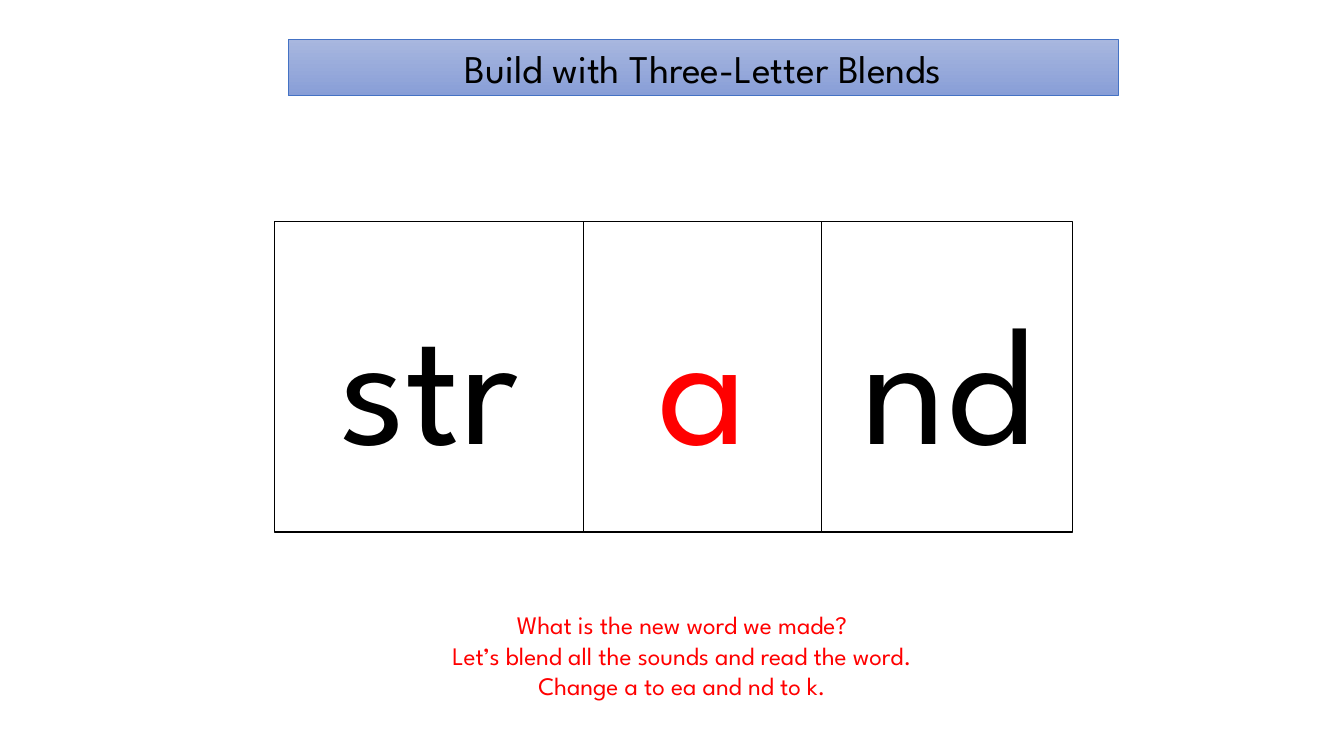
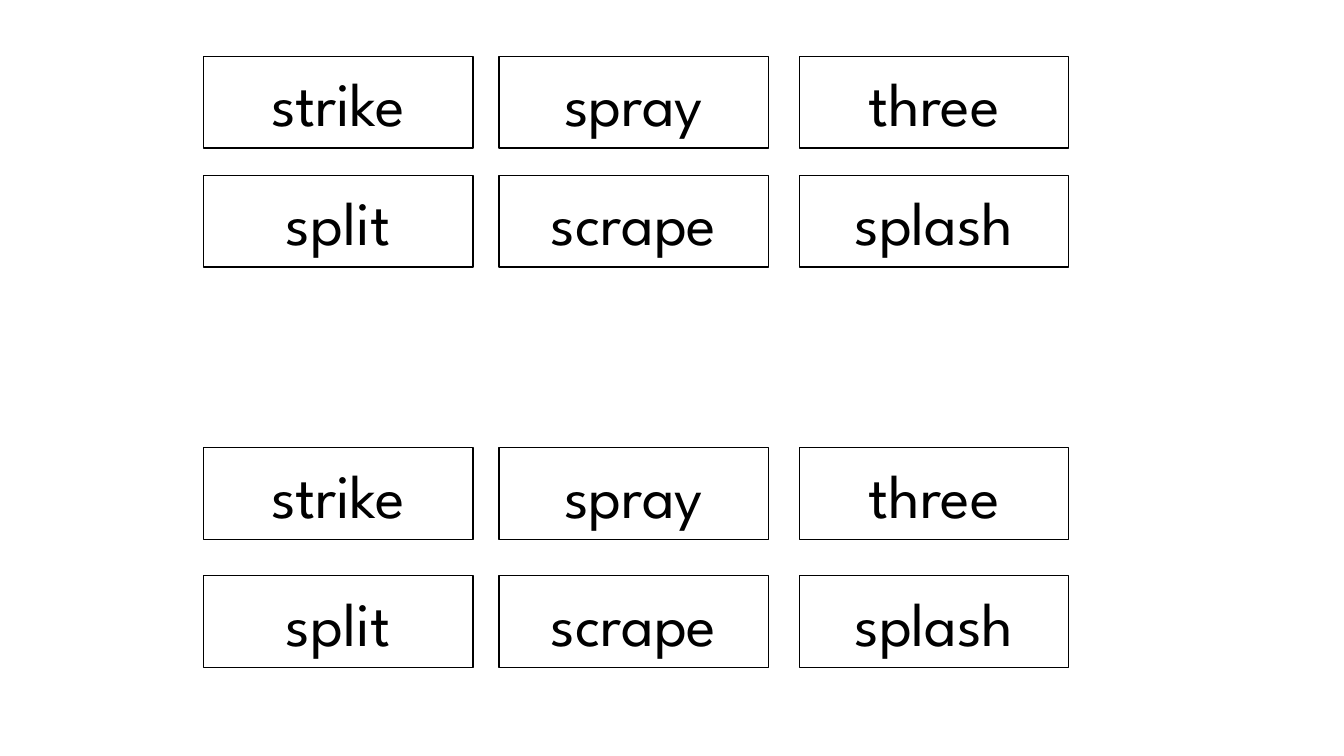
from pptx import Presentation
from pptx.dml.color import RGBColor
from pptx.enum.shapes import MSO_SHAPE
from pptx.enum.text import MSO_ANCHOR, PP_ALIGN
from pptx.util import Pt

PX = 9144  # 100 px to the inch

BLACK = RGBColor(0x00, 0x00, 0x00)
WHITE = RGBColor(0xFF, 0xFF, 0xFF)
RED = RGBColor(0xFF, 0x00, 0x00)
BANNER_LINE = RGBColor(0x44, 0x72, 0xC4)
BANNER_TOP = RGBColor(0xA8, 0xB7, 0xDF)
BANNER_BOTTOM = RGBColor(0x88, 0x9E, 0xD7)

# Text formats
BANNER_FONT = {"name": "League Spartan", "size": Pt(28)}
SOUND_FONT = {"name": "League Spartan", "size": Pt(120)}
PROMPT_FONT = {"name": "League Spartan", "size": Pt(18)}
WORD_FONT = {"name": "League Spartan", "size": Pt(44)}


def write_lines(frame, lines, font_format, color):
    frame.word_wrap = True
    for i, line in enumerate(lines):
        paragraph = frame.paragraphs[0] if i == 0 else frame.add_paragraph()
        paragraph.alignment = PP_ALIGN.CENTER
        run = paragraph.add_run()
        run.text = line
        for attribute, value in font_format.items():
            setattr(run.font, attribute, value)
        run.font.color.rgb = color


def add_card(slide, left, top, width, height, text, font_format, color=BLACK):
    card = slide.shapes.add_shape(
        MSO_SHAPE.RECTANGLE, left * PX, top * PX, width * PX, height * PX)
    card.shadow.inherit = False
    card.fill.solid()
    card.fill.fore_color.rgb = WHITE
    card.line.color.rgb = BLACK
    card.line.width = Pt(1)
    card.text_frame.vertical_anchor = MSO_ANCHOR.MIDDLE
    write_lines(card.text_frame, [text], font_format, color)
    return card


deck = Presentation()
deck.slide_width = 1333 * PX
deck.slide_height = 750 * PX
blank = deck.slide_layouts[6]

# Slide 1: building a word from its sounds
building = deck.slides.add_slide(blank)

# Title banner
banner = add_card(building, 286, 39, 823, 56, "Build with Three-Letter Blends", BANNER_FONT)
banner.fill.gradient()
banner.fill.gradient_angle = 270
for stop, shade in zip(banner.fill.gradient_stops, (BANNER_TOP, BANNER_BOTTOM)):
    stop.color.rgb = shade
banner.line.color.rgb = BANNER_LINE
banner.line.width = Pt(0.5)

# Sound cards, edge to edge
sound_left = 272
for sound, width, color in (("str", 307, BLACK), ("a", 236, RED), ("nd", 249, BLACK)):
    add_card(building, sound_left, 220, width, 308, sound, SOUND_FONT, color)
    sound_left += width

# Teacher prompt
prompt = building.shapes.add_textbox(328 * PX, 600 * PX, 697 * PX, 101 * PX)
write_lines(prompt.text_frame, (
    "What is the new word we made?",
    "Let’s blend all the sounds and read the word.",
    "Change a to ea and nd to k.",
), PROMPT_FONT, RED)

# Slide 2: two matching sets of word cards
matching = deck.slides.add_slide(blank)
word_rows = (("strike", "spray", "three"), ("split", "scrape", "splash"))
column_lefts = (202, 495, 793)
set_row_tops = ((56, 174), (444, 571))
for row_tops in set_row_tops:
    for top, words in zip(row_tops, word_rows):
        for left, word in zip(column_lefts, words):
            add_card(matching, left, top, 267, 91, word, WORD_FONT)

deck.save("out.pptx")
